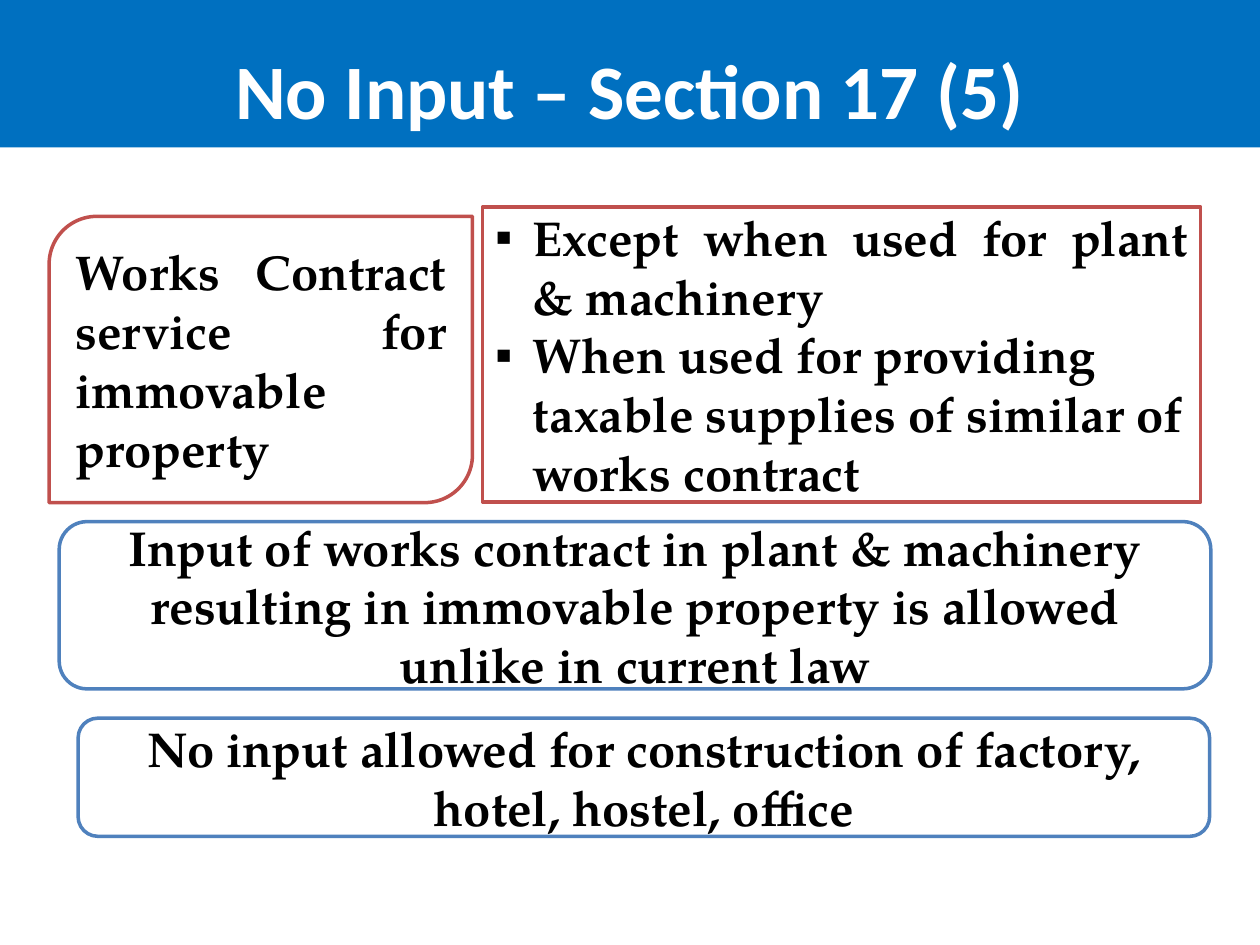
from lxml import etree
from pptx import Presentation
from pptx.dml.color import RGBColor
from pptx.enum.shapes import MSO_SHAPE
from pptx.enum.text import MSO_ANCHOR, MSO_AUTO_SIZE, PP_ALIGN
from pptx.oxml.ns import qn
from pptx.util import Inches, Pt

WIDTH, HEIGHT = Inches(10), Inches(7.5)
BLUE = RGBColor(0x00, 0x70, 0xC0)
RULE_BLUE = RGBColor(0x4F, 0x81, 0xBD)
RED = RGBColor(0xC0, 0x50, 0x4D)
WHITE = RGBColor(0xFF, 0xFF, 0xFF)
BLACK = RGBColor(0x00, 0x00, 0x00)

CENTER, JUSTIFY, LEFT = PP_ALIGN.CENTER, PP_ALIGN.JUSTIFY, PP_ALIGN.LEFT
MIDDLE, BOTTOM = MSO_ANCHOR.MIDDLE, MSO_ANCHOR.BOTTOM
ROUNDED = MSO_SHAPE.ROUNDED_RECTANGLE
DIAGONAL = MSO_SHAPE.ROUND_2_DIAG_RECTANGLE

TITLE_FONT = {"name": "Calibri", "size": Pt(44), "bold": True}
BODY_FONT = {"name": "TeX Gyre Pagella", "size": Pt(28), "bold": True}

# Left, top, width and height as shares of the slide
TITLE_AREA = (0, 0, 1, 0.156)
SERVICE_AREA = (0.039, 0.229, 0.336, 0.303)
EXCEPTIONS_AREA = (0.383, 0.219, 0.57, 0.312)
RULES = [
    ("Input of works contract in plant & machinery resulting in immovable "
     "property is allowed unlike in current law", (0.047, 0.552, 0.914, 0.177)),
    ("No input allowed for construction of factory, hotel, hostel, office",
     (0.062, 0.76, 0.898, 0.125)),
]
EXCEPTIONS = [
    ("Except when used for plant & machinery", JUSTIFY),
    ("When used for providing taxable supplies of similar of works contract", LEFT),
]


def to_lengths(area):
    return [int(share * side) for share, side in zip(area, (WIDTH, HEIGHT) * 2)]


def place(holder, area):
    holder.left, holder.top, holder.width, holder.height = to_lengths(area)


def paint(shape, fill=None, outline=None):
    if fill is None:
        shape.fill.background()
    else:
        shape.fill.solid()
        shape.fill.fore_color.rgb = fill
    if outline is not None:
        shape.line.color.rgb = outline
        shape.line.width = Pt(2)


def write(shape, entries, font, color, anchor=MIDDLE):
    """Fill a shape with (text, alignment) paragraphs in one format."""
    frame = shape.text_frame
    frame.word_wrap = True
    frame.auto_size = MSO_AUTO_SIZE.NONE
    frame.vertical_anchor = anchor
    for index, (text, alignment) in enumerate(entries):
        paragraph = frame.add_paragraph() if index else frame.paragraphs[0]
        paragraph.alignment = alignment
        paragraph.space_before = Pt(0)
        run = paragraph.add_run()
        run.text = text
        for attribute, value in font.items():
            setattr(run.font, attribute, value)
        run.font.color.rgb = color


def add_bullets(shape, mark="▪", indent=Inches(0.3)):
    for paragraph in shape.text_frame.paragraphs:
        properties = paragraph._p.get_or_add_pPr()
        properties.set("marL", str(indent))
        properties.set("indent", str(-indent))
        etree.SubElement(properties, qn("a:buFont"), typeface="Arial")
        etree.SubElement(properties, qn("a:buChar"), char=mark)


def add_box(slide, preset, area, text, alignment, outline, fill=None):
    box = slide.shapes.add_shape(preset, *to_lengths(area))
    box.shadow.inherit = False
    paint(box, fill, outline)
    write(box, [(text, alignment)], BODY_FONT, BLACK)


def fill_title(title):
    place(title, TITLE_AREA)
    paint(title, BLUE)
    write(title, [("No Input – Section 17 (5)", CENTER)], TITLE_FONT, WHITE, BOTTOM)
    for margin in ("left", "top", "right", "bottom"):
        setattr(title.text_frame, f"margin_{margin}", Inches(0.1))


def fill_exceptions(body):
    place(body, EXCEPTIONS_AREA)
    paint(body, WHITE, RED)
    write(body, EXCEPTIONS, BODY_FONT, BLACK)
    add_bullets(body)


def main():
    presentation = Presentation()
    presentation.slide_width, presentation.slide_height = WIDTH, HEIGHT
    slide = presentation.slides.add_slide(presentation.slide_layouts[1])
    fill_title(slide.shapes.title)
    fill_exceptions(slide.placeholders[1])
    add_box(slide, DIAGONAL, SERVICE_AREA,
            "Works Contract service for immovable property", JUSTIFY, RED, WHITE)
    for text, area in RULES:
        add_box(slide, ROUNDED, area, text, CENTER, RULE_BLUE)
    presentation.save("out.pptx")


if __name__ == "__main__":
    main()
